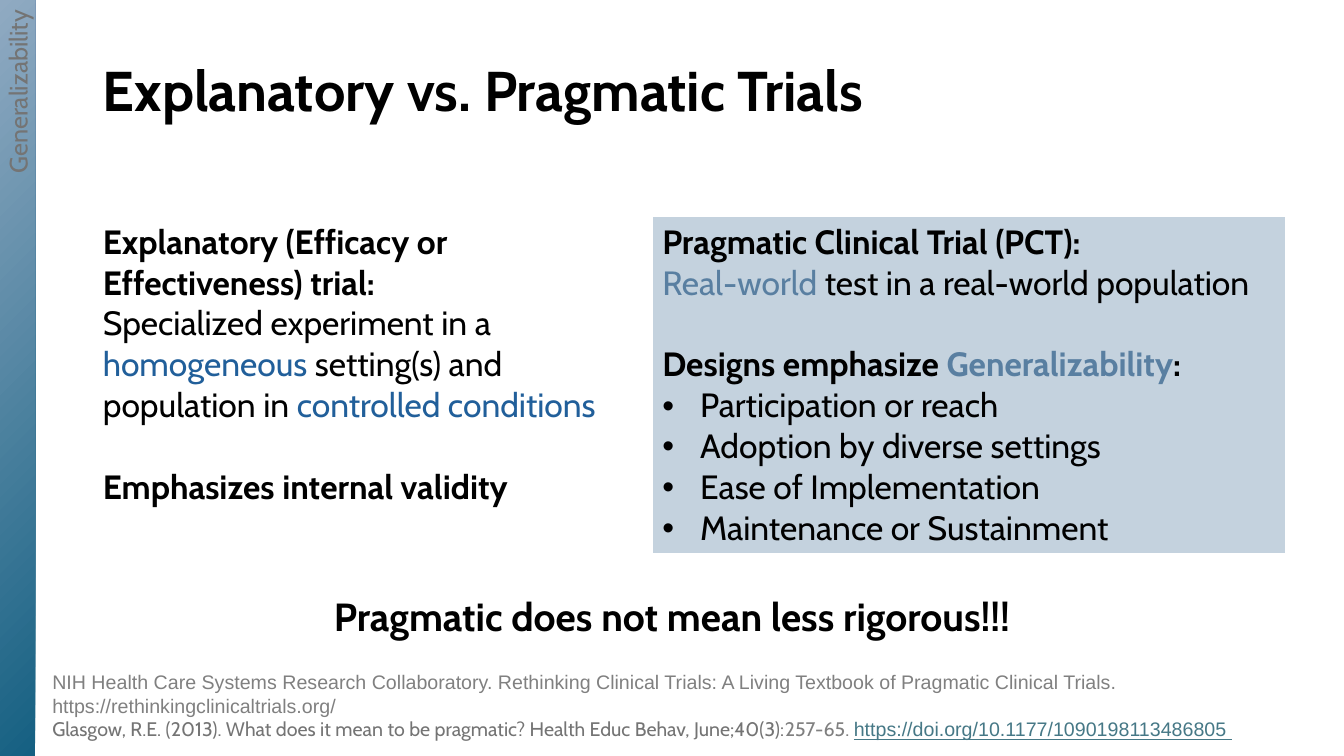
import collections

import lxml.etree
import pptx
import pptx.dml.color
import pptx.enum.shapes
import pptx.enum.text
import pptx.oxml.ns
import pptx.util

Pt = pptx.util.Pt
qn = pptx.oxml.ns.qn
ALIGN = pptx.enum.text.PP_ALIGN
ANCHOR = pptx.enum.text.MSO_ANCHOR
Box = collections.namedtuple("Box", "left top width height")

BLACK, BLUE, STEEL = "000000", "215F9A", "597FA1"
GRAY, DARK_GRAY, LINK, PANEL = "808080", "747474", "467886", "C4D2DE"
LINE_HEIGHT = 29.2  # one line of the 24 pt table text


def color(hex_string):
    return pptx.dml.color.RGBColor.from_string(hex_string)


def place(box):
    return [Pt(length) for length in box]


def next_para(frame, align=ALIGN.LEFT, before=0):
    """Use the empty first paragraph, then add further ones."""
    para = frame.paragraphs[0]
    if para.runs:
        para = frame.add_paragraph()
    para.alignment = align
    if before:
        para.space_before = Pt(before)
    return para


def add_span(para, text, size=24, font="Cabin", fill=BLACK, bold=False, underline=False):
    span = para.add_run()
    span.text = text
    span.font.size = Pt(size)
    span.font.name = font
    span.font.bold = bold
    span.font.underline = underline
    span.font.color.rgb = color(fill)


def add_bullet(para, indent=27):
    properties = para._p.get_or_add_pPr()
    properties.set("marL", str(Pt(indent)))
    properties.set("indent", str(-Pt(indent)))
    lxml.etree.SubElement(properties, qn("a:buFont")).set("typeface", "Arial")
    lxml.etree.SubElement(properties, qn("a:buChar")).set("char", "•")


def add_text_box(page, box):
    frame = page.shapes.add_textbox(*place(box)).text_frame
    frame.word_wrap = True
    return frame


def set_title(page, box):
    title = page.shapes.title
    title.left, title.top, title.width, title.height = place(box)
    frame = title.text_frame
    frame.auto_size = pptx.enum.text.MSO_AUTO_SIZE.NONE
    frame.vertical_anchor = ANCHOR.MIDDLE
    para = next_para(frame)
    para.line_spacing = 0.9
    add_span(para, "Explanatory vs. Pragmatic Trials", size=40, bold=True)


def fill_explanatory(frame):
    add_span(next_para(frame), "Explanatory (Efficacy or Effectiveness) trial:", bold=True)
    para = next_para(frame)
    add_span(para, "Specialized experiment in a ")
    add_span(para, "homogeneous", fill=BLUE)
    add_span(para, " setting(s) and population in ")
    add_span(para, "controlled conditions", fill=BLUE)
    add_span(next_para(frame, before=LINE_HEIGHT), "Emphasizes internal validity", bold=True)


def fill_pragmatic(frame):
    add_span(next_para(frame), "Pragmatic Clinical Trial (PCT):", bold=True)
    para = next_para(frame)
    add_span(para, "Real-world", fill=STEEL)
    add_span(para, " test in a real-world population")
    para = next_para(frame, before=LINE_HEIGHT)
    add_span(para, "Designs emphasize ", bold=True)
    add_span(para, "Generalizability", fill=STEEL, bold=True)
    add_span(para, ":", bold=True)
    for text in ("Participation or reach", "Adoption by diverse settings",
                 "Ease of Implementation", "Maintenance or Sustainment"):
        para = next_para(frame)
        add_bullet(para)
        add_span(para, text)


def add_comparison(page, box, left_width=399.6):
    table = page.shapes.add_table(1, 2, *place(box)).table
    table.first_row = table.horz_banding = False
    table.columns[0].width = Pt(left_width)
    table.columns[1].width = Pt(box.width - left_width)
    explanatory, pragmatic = table.cell(0, 0), table.cell(0, 1)
    explanatory.fill.background()
    pragmatic.fill.solid()
    pragmatic.fill.fore_color.rgb = color(PANEL)
    fill_explanatory(explanatory.text_frame)
    fill_pragmatic(pragmatic.text_frame)


def add_takeaway(page, box):
    para = next_para(add_text_box(page, box), align=ALIGN.CENTER)
    add_span(para, "Pragmatic does not mean less rigorous!!!", size=28, bold=True)


def add_references(page, box):
    frame = add_text_box(page, box)
    add_span(next_para(frame),
             "NIH Health Care Systems Research Collaboratory. Rethinking Clinical Trials: "
             "A Living Textbook of Pragmatic Clinical Trials. "
             "https://rethinkingclinicaltrials.org/", size=14, font="Arial", fill=GRAY)
    para = next_para(frame)
    add_span(para, "Glasgow, R.E. (2013). What does it mean to be pragmatic? "
                   "Health Educ Behav, June;40(3):", size=14, fill=DARK_GRAY)
    add_span(para, "257-65. ", size=14, fill=GRAY)
    add_span(para, "https://doi.org/10.1177/1090198113486805", size=14, font="Arial",
             fill=LINK, underline=True)
    add_span(para, " ", size=14, font="Arial", fill=LINK, underline=True)


def add_side_band(page, box):
    band = page.shapes.add_shape(pptx.enum.shapes.MSO_SHAPE.RECTANGLE, *place(box))
    band.shadow.inherit = False
    band.line.fill.background()
    # Radial gradient spreading from the top left corner
    band.fill.gradient()
    for stop, shade in zip(band.fill.gradient_stops, ("90AAC2", "156082")):
        stop.color.rgb = color(shade)
    gradient = band._element.spPr.find(qn("a:gradFill"))
    gradient.remove(gradient.find(qn("a:lin")))
    radial = lxml.etree.SubElement(gradient, qn("a:path"))
    radial.set("path", "circle")
    center = lxml.etree.SubElement(radial, qn("a:fillToRect"))
    center.set("r", "100000")
    center.set("b", "100000")
    # Label reading upwards
    frame = band.text_frame
    frame.vertical_anchor = ANCHOR.MIDDLE
    frame._txBody.bodyPr.set("vert", "vert270")
    add_span(next_para(frame, align=ALIGN.RIGHT), "Generalizability", size=18, fill=DARK_GRAY)


def main():
    deck = pptx.Presentation()
    deck.slide_width, deck.slide_height = Pt(960), Pt(540)
    page = deck.slides.add_slide(deck.slide_layouts[5])
    add_comparison(page, Box(66.25, 154.8, 851.75, 237.6))
    set_title(page, Box(66.25, 28.8, 874.8, 76.3))
    add_takeaway(page, Box(208.8, 419.8, 542.2, 41))
    add_references(page, Box(30.25, 475.2, 923, 58.3))
    add_side_band(page, Box(0, 0, 25.2, 540))
    deck.save("out.pptx")


if __name__ == "__main__":
    main()
